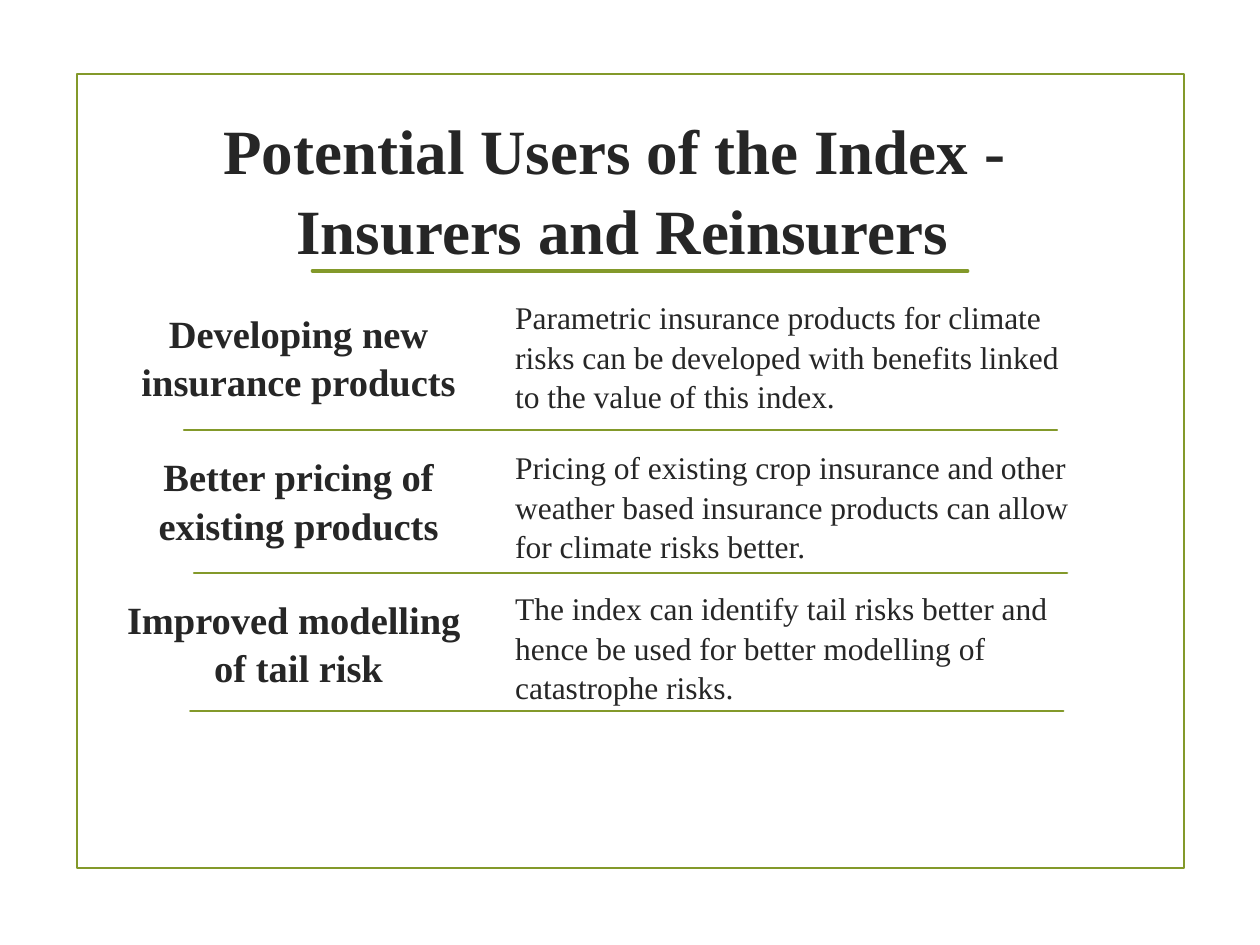
from lxml import etree
from pptx import Presentation
from pptx.dml.color import RGBColor
from pptx.enum.shapes import MSO_CONNECTOR, MSO_SHAPE
from pptx.enum.text import MSO_ANCHOR, PP_ALIGN
from pptx.oxml.ns import qn
from pptx.util import Inches, Pt

LEFT, CENTER = PP_ALIGN.LEFT, PP_ALIGN.CENTER
TOP = MSO_ANCHOR.TOP
RECT = MSO_SHAPE.RECTANGLE
STRAIGHT = MSO_CONNECTOR.STRAIGHT

COLORS = {"green": "83992A", "ink": "262626"}

HEAD_X, HEAD_W, HEAD_H = 0.75, 3.24, 0.87
BODY_X, BODY_W, BODY_H = 3.99, 4.7, 0.95
RULE_W = 6.93

# heading top, heading paragraphs, body top, body text, rule left, rule height on slide
ROWS = [
    (2.39, ["Developing new insurance products"], 2.3,
     "Parametric insurance products for climate risks can be developed "
     "with benefits linked to the value of this index.", 1.46, 3.41),
    (3.53, ["Better pricing of existing products"], 3.49,
     "Pricing of existing crop insurance and other weather based insurance "
     "products can allow for climate risks better.", 1.54, 4.55),
    (4.66, ["Improved modelling ", "of tail risk"], 4.61,
     "The index can identify tail risks better and hence be used for "
     "better modelling of catastrophe risks.", 1.51, 5.64),
]


def write(tf, paragraphs, size=18, bold=False, align=LEFT, color="ink",
          font="Times New Roman", spacing=1.05):
    for i, text in enumerate(paragraphs):
        p = tf.paragraphs[0] if i == 0 else tf.add_paragraph()
        p.text = text
        p.alignment = align
        p.line_spacing = spacing
        for r in p.runs:
            r.font.name = font
            r.font.size = Pt(size)
            r.font.bold = bold
            r.font.color.rgb = RGBColor.from_string(COLORS[color])


class Deck:
    def __init__(self, slide, accent="green"):
        self.slide = slide
        self.accent = RGBColor.from_string(COLORS[accent])

    def frame(self, x, y, w, h, weight=1.25):
        s = self.slide.shapes.add_shape(RECT, Inches(x), Inches(y), Inches(w), Inches(h))
        s.shadow.inherit = False
        s.fill.background()
        s.line.color.rgb = self.accent
        s.line.width = Pt(weight)

    def rule(self, x, y, w, weight=1.25):
        s = self.slide.shapes.add_connector(
            STRAIGHT, Inches(x), Inches(y), Inches(x + w), Inches(y))
        s.line.color.rgb = self.accent
        s.line.width = Pt(weight)
        s.line._get_or_add_ln().set("cap", "rnd")
        etree.SubElement(s._element.spPr, qn("a:effectLst"))

    def text(self, x, y, w, h, paragraphs, **style):
        tf = self.slide.shapes.add_textbox(
            Inches(x), Inches(y), Inches(w), Inches(h)).text_frame
        tf.word_wrap = True
        tf.vertical_anchor = TOP
        write(tf, paragraphs, **style)


def main():
    prs = Presentation()
    prs.slide_width, prs.slide_height = Inches(10), Inches(7.5)
    deck = Deck(prs.slides.add_slide(prs.slide_layouts[6]))

    # Border
    deck.frame(0.61, 0.59, 8.79, 6.3)

    # Title and its underline
    deck.text(1.22, 0.81, 7.44, 1.43,
              ["Potential Users of the Index - \vInsurers and Reinsurers"],
              size=36, bold=True, align=CENTER)
    deck.rule(2.48, 2.15, 5.2, weight=2)

    # One row per use: heading, explanation, separator
    for head_y, heading, body_y, body, rule_x, rule_y in ROWS:
        deck.text(HEAD_X, head_y, HEAD_W, HEAD_H, heading,
                  size=22, bold=True, align=CENTER)
        deck.text(BODY_X, body_y, BODY_W, BODY_H, [body])
        deck.rule(rule_x, rule_y, RULE_W)

    prs.save("out.pptx")


if __name__ == "__main__":
    main()
